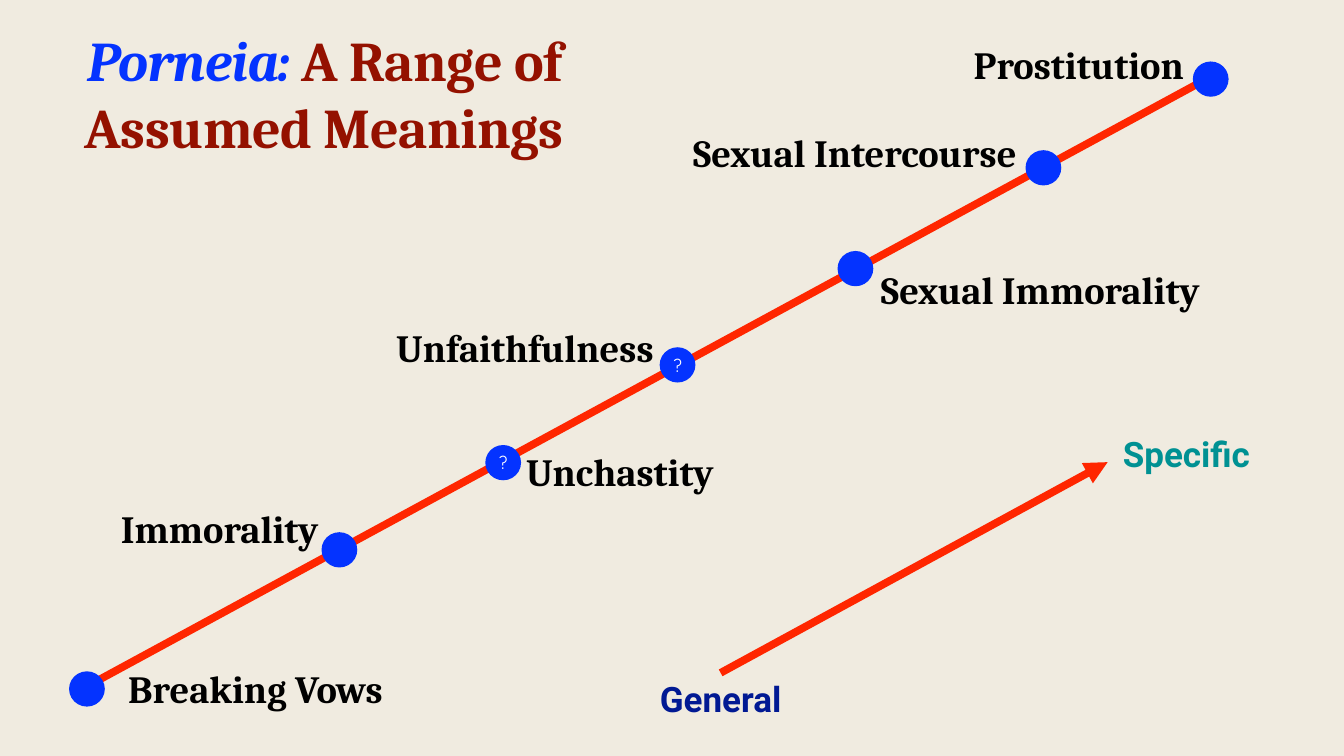
from pptx import Presentation
from pptx.util import Emu, Pt
from pptx.dml.color import RGBColor
from pptx.enum.shapes import MSO_CONNECTOR, MSO_SHAPE
from pptx.enum.text import MSO_ANCHOR, PP_ALIGN
from pptx.oxml import parse_xml
from pptx.oxml.ns import nsdecls, qn
from lxml import etree

LEFT, CENTER, RIGHT = PP_ALIGN.LEFT, PP_ALIGN.CENTER, PP_ALIGN.RIGHT
TOP, MIDDLE = MSO_ANCHOR.TOP, MSO_ANCHOR.MIDDLE
STRAIGHT, OVAL = MSO_CONNECTOR.STRAIGHT, MSO_SHAPE.OVAL

PX = 9144
WIDTH, HEIGHT = 2667, 1500
INSET = 6
DOT_W, DOT_H = 71, 70
BLUE, RED, MAROON, BLACK, WHITE = "0433FF", "FF2600", "941100", "000000", "FFFFFF"

TITLE_BOX = (58, 47, 1171, 274)
TITLE = [("Porneia:", BLUE, True), (" A Range of Assumed Meanings", MAROON, False)]

MEANINGS = [
    ("Breaking Vows", (0, 1314, 1014, 138), CENTER),
    ("Immorality", (218, 997, 420, 120), RIGHT),
    ("Unchastity", (723, 883, 1014, 138), CENTER),
    ("Unfaithfulness", (763, 636, 540, 106), RIGHT),
    ("Sexual Immorality", (1742, 522, 687, 103), LEFT),
    ("Sexual Intercourse", (1301, 250, 722, 103), RIGHT),
    ("Prostitution", (1633, 75, 722, 103), RIGHT),
]
DOTS = [
    (137, 1332, ""), (638, 1056, ""), (963, 883, "?"), (1309, 689, "?"),
    (1662, 498, ""), (2035, 298, ""), (2367, 122, ""),
]
RANGE_LINE = (176, 1360, 2425, 140)
SCALE_ARROW = (1430, 1335, 2198, 917)
SCALE_ENDS = [
    ("Specific", (2216, 847, 277, 106), "009193"),
    ("General", (1291, 1332, 278, 106), "011993"),
]


def px(values):
    return [Emu(v * PX) for v in values]


def rgb(color):
    return RGBColor.from_string(color)


def setup_frame(tf, align, anchor=TOP, before=0, wrap=True):
    tf.word_wrap = wrap
    tf.vertical_anchor = anchor
    tf.margin_left = tf.margin_top = tf.margin_right = tf.margin_bottom = Emu(INSET * PX)
    p = tf.paragraphs[0]
    p.alignment = align
    p.space_before = Pt(before)
    return p


def add_run(p, text, size, font, color, bold=True, italic=False):
    r = p.add_run()
    r.text = text
    f = r.font
    f.size, f.name, f.bold, f.italic = Pt(size), font, bold, italic
    f.color.rgb = rgb(color)
    return r


def add_text(s, box):
    return s.shapes.add_textbox(*px(box)).text_frame


def add_line(s, ends, arrow=False):
    sp = s.shapes.add_connector(STRAIGHT, *px(ends))
    sp.line.color.rgb = rgb(RED)
    sp.line.width = Pt(11)
    if arrow:
        etree.SubElement(sp.line._get_or_add_ln(), qn("a:tailEnd"), type="triangle")
    etree.SubElement(sp._element.spPr, qn("a:effectLst"))


def add_dot(s, x, y, mark):
    sp = s.shapes.add_shape(OVAL, *px((x, y, DOT_W, DOT_H)))
    sp.shadow.inherit = False
    sp.fill.solid()
    sp.fill.fore_color.rgb = rgb(BLUE)
    sp.line.fill.background()
    if mark:
        p = setup_frame(sp.text_frame, CENTER, MIDDLE)
        add_run(p, mark, 26, "Quicksand", WHITE, bold=False)


def add_title(s):
    p = setup_frame(add_text(s, TITLE_BOX), CENTER, MIDDLE)
    for text, color, italic in TITLE:
        r = add_run(p, text, 80, "Cambria", color, italic=italic)
        rPr = r.font._element
        rPr.set("spc", "-80")
        shadow = parse_xml(
            f'<a:effectLst {nsdecls("a")}><a:outerShdw blurRad="38100" dist="50800" dir="2700000">'
            '<a:srgbClr val="000000"/></a:outerShdw></a:effectLst>')
        rPr.find(qn("a:solidFill")).addnext(shadow)


def main():
    prs = Presentation()
    prs.slide_width, prs.slide_height = px((WIDTH, HEIGHT))
    s = prs.slides.add_slide(prs.slide_layouts[6])
    s.background.fill.solid()
    s.background.fill.fore_color.rgb = rgb("F0EBE0")

    add_title(s)
    add_line(s, RANGE_LINE)
    for text, box, align in MEANINGS:
        p = setup_frame(add_text(s, box), align, before=8)
        add_run(p, text, 55, "Cambria", BLACK)
    for dot in DOTS:
        add_dot(s, *dot)
    add_line(s, SCALE_ARROW, arrow=True)
    for text, box, color in SCALE_ENDS:
        p = setup_frame(add_text(s, box), CENTER, MIDDLE, before=10, wrap=False)
        add_run(p, text, 50, "Roboto", color)

    prs.save("out.pptx")


if __name__ == "__main__":
    main()
